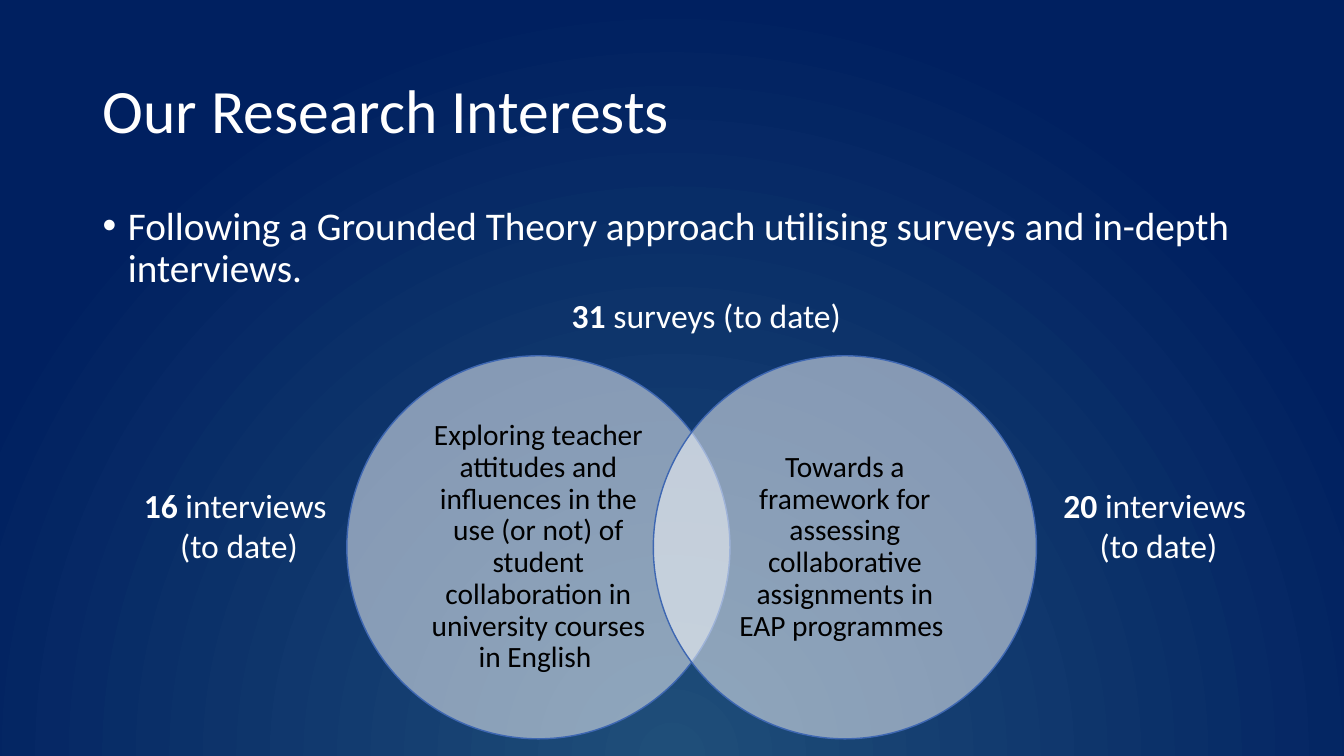
from lxml import etree
from pptx import Presentation
from pptx.dml.color import RGBColor
from pptx.enum import shapes, text
from pptx.oxml import ns
from pptx.util import Inches, Pt

WHITE, BLACK, OUTLINE = "FFFFFF", "000000", "3E67B2"
GLOW, NAVY = "1F4E79", "002060"


def rgb(value):
    return RGBColor.from_string(value)


def add_xml(parent, tag, **attributes):
    return etree.SubElement(parent, ns.qn(tag), attributes)


class SlideBuilder:
    font = "Calibri"

    def __init__(self, slide):
        self.slide = slide

    def background(self, inner, outer):
        """Fill the slide with a circular gradient centred below its bottom edge."""
        fill = self.slide.background.fill
        fill.gradient()
        for stop, color in zip(fill.gradient_stops, (inner, outer)):
            stop.color.rgb = rgb(color)
        gradient = self.slide.element.find(".//" + ns.qn("a:gradFill"))
        gradient.remove(gradient.find(ns.qn("a:lin")))
        circle = add_xml(gradient, "a:path", path="circle")
        add_xml(circle, "a:fillToRect", l="50000", t="130000", r="50000", b="-30000")

    def place(self, shape, left, top, width, height):
        shape.left, shape.top = Inches(left), Inches(top)
        shape.width, shape.height = Inches(width), Inches(height)

    def add_runs(self, paragraph, runs, size, color=WHITE, align=text.PP_ALIGN.LEFT,
                 spacing=None):
        """Add (words, bold) runs to a paragraph."""
        paragraph.alignment = align
        paragraph.line_spacing = spacing
        for words, bold in runs:
            run = paragraph.add_run()
            run.text = words
            run.font.name, run.font.size, run.font.bold = self.font, Pt(size), bold
            run.font.color.rgb = rgb(color)

    def text_frame(self, *box):
        frame = self.slide.shapes.add_textbox(*map(Inches, box)).text_frame
        frame.word_wrap = True
        return frame

    def title(self, words, *box):
        title = self.slide.shapes.title
        self.place(title, *box)
        title.text_frame.vertical_anchor = text.MSO_ANCHOR.MIDDLE
        self.add_runs(title.text_frame.paragraphs[0], [(words, False)], 44, spacing=0.9)

    def bullet(self, words, *box):
        paragraph = self.text_frame(*box).paragraphs[0]
        self.add_runs(paragraph, [(words, False)], 28, spacing=0.9)
        properties = paragraph._p.get_or_add_pPr()
        indent = Inches(0.25)
        properties.set("marL", str(indent))
        properties.set("indent", str(-indent))
        add_xml(properties, "a:buFont", typeface="Arial")
        add_xml(properties, "a:buChar", char="•")

    def count(self, number, *lines, box):
        """Add a centred label that opens with a bold number."""
        frame = self.text_frame(*box)
        frame.auto_size = text.MSO_AUTO_SIZE.SHAPE_TO_FIT_TEXT
        for index, line in enumerate(lines):
            paragraph = frame.add_paragraph() if index else frame.paragraphs[0]
            runs = [(line, False)] if index else [(number + " ", True), (line, False)]
            self.add_runs(paragraph, runs, 24, align=text.PP_ALIGN.CENTER)

    def circle(self, words, left, top, diameter):
        circle = self.slide.shapes.add_shape(
            shapes.MSO_SHAPE.OVAL, *map(Inches, (left, top, diameter, diameter)))
        circle.shadow.inherit = False
        circle.fill.solid()
        circle.fill.fore_color.rgb = rgb(WHITE)
        solid = circle.fill._xPr.find(ns.qn("a:solidFill"))
        add_xml(solid[0], "a:alpha", val="50000")
        circle.line.color.rgb = rgb(OUTLINE)
        circle.line.width = Pt(1)
        frame = circle.text_frame
        frame.word_wrap = True
        frame.vertical_anchor = text.MSO_ANCHOR.MIDDLE
        frame.margin_left = frame.margin_right = Inches(0.21)
        frame.margin_top = frame.margin_bottom = Inches(0.03)
        self.add_runs(frame.paragraphs[0], [(words, False)], 21, BLACK,
                      text.PP_ALIGN.CENTER, 0.9)


def main():
    deck = Presentation()
    deck.slide_width, deck.slide_height = Inches(13.33), Inches(7.5)
    builder = SlideBuilder(deck.slides.add_slide(deck.slide_layouts[5]))
    builder.background(GLOW, NAVY)
    builder.title("Our Research Interests", 0.92, 0.4, 11.5, 1.45)
    builder.bullet("Following a Grounded Theory approach utilising surveys and "
                   "in-depth interviews.", 0.92, 2, 11.71, 4.76)

    interests = (
        "Exploring teacher attitudes and influences in the use (or not) of student "
        "collaboration in university courses in English ",
        "Towards a framework for assessing collaborative assignments in EAP programmes ",
    )
    for index, interest in enumerate(interests):
        builder.circle(interest, 3.44 + 3.04 * index, 3.53, 3.8)

    builder.count("20", "interviews ", "(to date)", box=(9.78, 4.76, 3.42, 0.91))
    builder.count("16", "interviews ", "(to date)", box=(0.62, 4.76, 3.5, 0.91))
    builder.count("31", "surveys (to date)", box=(3.83, 2.88, 6.35, 0.5))
    deck.save("out.pptx")


if __name__ == "__main__":
    main()
